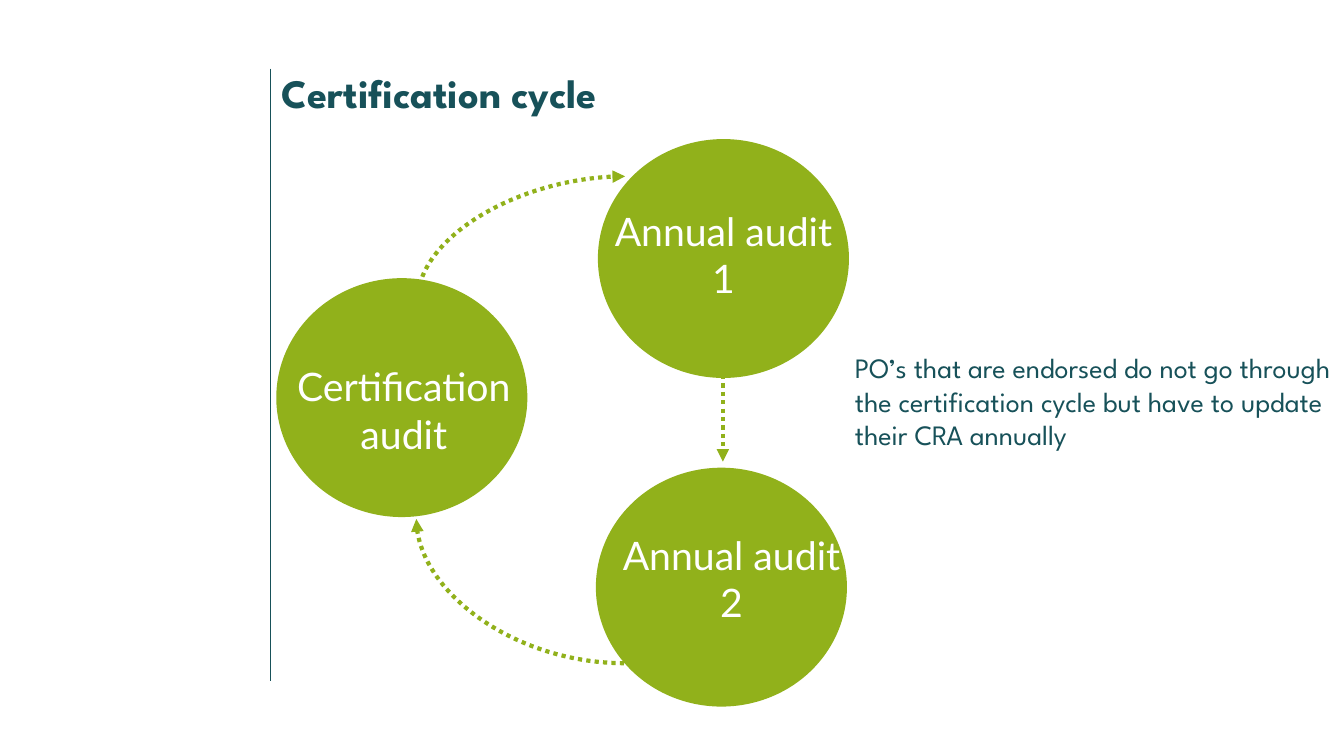
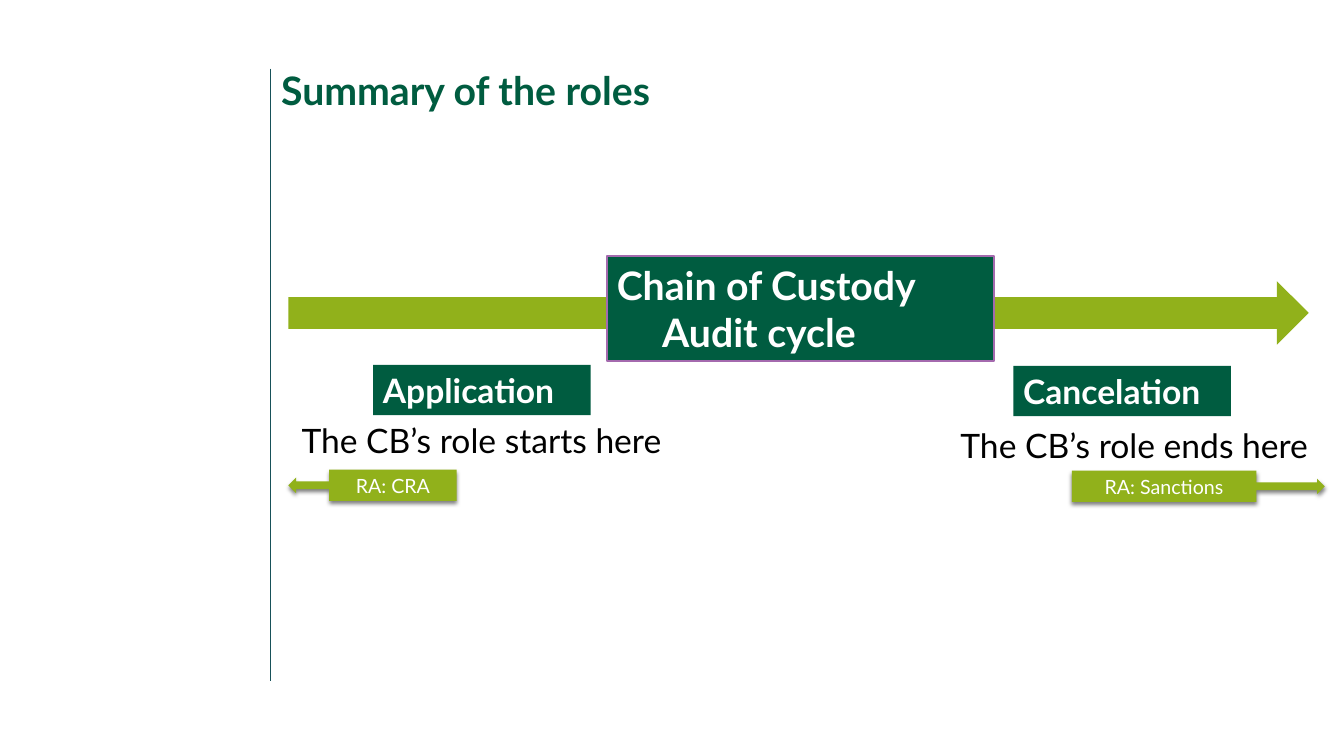
from lxml.etree import SubElement
from pptx import Presentation
from pptx.dml.color import RGBColor
from pptx.enum.dml import MSO_LINE
from pptx.enum.shapes import MSO_CONNECTOR, MSO_SHAPE
from pptx.enum.text import MSO_ANCHOR, PP_ALIGN
from pptx.oxml.ns import qn
from pptx.util import Inches, Pt

COLORS = {
    "teal": "175159",
    "forest": "005C40",
    "lime": "91B11B",
    "violet": "A46AAE",
    "white": "FFFFFF",
    "black": "000000",
}
BODY_FONT = "Lato"
DISPLAY_FONT = "League Spartan"
RULE_X, RULE_TOP, RULE_BOTTOM = 2.68, 0.68, 6.76


def rgb(name):
    return RGBColor.from_string(COLORS[name])


def write(shape, *lines, size=28, font=BODY_FONT, color="white", bold=False,
          align=PP_ALIGN.LEFT, anchor=MSO_ANCHOR.TOP, inset=None, indents=()):
    """Fill a shape with one paragraph per line; indents are in inches."""
    frame = shape.text_frame
    frame.word_wrap = True
    frame.vertical_anchor = anchor
    if inset is not None:
        frame.margin_left = frame.margin_right = Inches(inset)
        frame.margin_top = frame.margin_bottom = Inches(inset)
    for i, line in enumerate(lines):
        paragraph = frame.paragraphs[0] if i == 0 else frame.add_paragraph()
        paragraph.alignment = align
        if i < len(indents):
            paragraph._p.get_or_add_pPr().set("marL", str(Inches(indents[i])))
        run = paragraph.add_run()
        run.text = line
        run.font.size = Pt(size)
        run.font.name = font
        run.font.bold = bold
        run.font.color.rgb = rgb(color)


def add_text(slide, box, *lines, **style):
    write(slide.shapes.add_textbox(*map(Inches, box)), *lines, **style)


def add_block(slide, kind, box, fill, outline=None):
    block = slide.shapes.add_shape(kind, *map(Inches, box))
    block.shadow.inherit = False
    block.fill.solid()
    block.fill.fore_color.rgb = rgb(fill)
    if outline:
        block.line.color.rgb = rgb(outline)
        block.line.width = Pt(1)
    else:
        block.line.fill.background()
    return block


def add_line(slide, start, end, color, width, kind=MSO_CONNECTOR.STRAIGHT):
    line = slide.shapes.add_connector(kind, *map(Inches, (*start, *end)))
    line.line.color.rgb = rgb(color)
    line.line.width = Pt(width)
    SubElement(line._element.spPr, qn("a:effectLst"))
    return line


def add_dotted_arrow(slide, start, end, curved=True, leave_upright=False):
    """Dotted arrow; a curved one bends a quarter turn on its way."""
    if leave_upright:
        # Turn both points back about their centre, then rotate the connector
        cx, cy = (start[0] + end[0]) / 2, (start[1] + end[1]) / 2
        start, end = [(cx + y - cy, cy - x + cx) for x, y in (start, end)]
    kind = MSO_CONNECTOR.CURVE if curved else MSO_CONNECTOR.STRAIGHT
    arrow = add_line(slide, start, end, "lime", 3, kind)
    arrow.line.dash_style = MSO_LINE.ROUND_DOT
    SubElement(arrow.line._get_or_add_ln(), qn("a:tailEnd"), type="triangle")
    properties = arrow._element.spPr
    if curved:
        properties.find(qn("a:prstGeom")).set("prst", "curvedConnector2")
    if leave_upright:
        properties.find(qn("a:xfrm")).set("rot", str(90 * 60000))


def add_soft_shadow(shape):
    effects = shape._element.spPr.find(qn("a:effectLst"))
    shadow = SubElement(effects, qn("a:outerShdw"), blurRad=str(Pt(3)),
                        dist=str(Pt(2)), dir=str(90 * 60000), rotWithShape="0")
    color = SubElement(shadow, qn("a:srgbClr"), val=COLORS["black"])
    SubElement(color, qn("a:alpha"), val="50000")


def new_slide(deck, title, top, **style):
    """Blank slide with the shared vertical rule and title."""
    slide = deck.slides.add_slide(deck.slide_layouts[6])
    add_line(slide, (RULE_X, RULE_TOP), (RULE_X, RULE_BOTTOM), "teal", 0.5)
    add_text(slide, (2.69, top, 10.07, 0.67), title, bold=True, **style)
    return slide


def add_audit(slide, left, top, label, shift, drop):
    """Audit circle; shift and drop place its label inside."""
    width, height, label_width = 2.49, 2.37, 2.5
    add_block(slide, MSO_SHAPE.OVAL, (left, top, width, height), "lime")
    label_left = left + (width - label_width) / 2 + shift
    add_text(slide, (label_left, top + drop, label_width, 1.04), label,
             align=PP_ALIGN.CENTER)


def add_role_end(slide, left, top, stage, note, note_box, callout, kind,
                 callout_box, body_share):
    """Stage tag, with its note and callout placed from the tag's corner."""
    def place(dx, dy, width, height):
        return left + dx, top + dy, width, height

    tag = add_block(slide, MSO_SHAPE.RECTANGLE, place(0, 0, 2.16, 0.5), "forest")
    write(tag, stage, size=24, bold=True)
    centred = dict(align=PP_ALIGN.CENTER, anchor=MSO_ANCHOR.MIDDLE, inset=0.04)
    add_text(slide, place(*note_box), note, size=24, color="black", **centred)
    pointer = add_block(slide, kind, place(*callout_box), "lime")
    for i, value in enumerate((0.25, 0.25, 0.25, body_share)):
        pointer.adjustments[i] = value
    add_soft_shadow(pointer)
    write(pointer, callout, size=14, **centred)


def cycle_slide(deck):
    slide = new_slide(deck, "Certification cycle", 0.63, size=28.8,
                      font=DISPLAY_FONT, color="teal")
    # Audits
    for audit in ((2.74, 2.76, "Certification audit", 0.02, 0.79),
                  (5.93, 1.38, "Annual audit 1", 0, 0.63),
                  (5.91, 4.64, "Annual audit 2", 0.1, 0.58)):
        add_audit(slide, *audit)
    # Steps of the cycle
    add_dotted_arrow(slide, (4.14, 2.99), (6.2, 1.75), leave_upright=True)
    add_dotted_arrow(slide, (7.17, 3.72), (7.17, 4.58), curved=False)
    add_dotted_arrow(slide, (6.19, 6.58), (4.13, 5.15))
    # Remark on endorsed POs
    add_text(slide, (8.38, 3.43, 4.95, 1.79),
             "PO’s that are endorsed do not go through the certification cycle "
             "but have to update their CRA annually",
             size=20, font=DISPLAY_FONT, color="teal")


def roles_slide(deck):
    slide = new_slide(deck, "Summary of the roles", 0.61, color="forest")
    # Start and end of the role
    add_role_end(slide, 3.7, 3.62, "Application",
                 "The CB’s role starts here", (-1.23, 0.51, 4.61, 0.48),
                 "RA: CRA", MSO_SHAPE.LEFT_ARROW_CALLOUT,
                 (-0.84, 1.04, 1.67, 0.31), 0.757)
    add_role_end(slide, 10.05, 3.63, "Cancelation",
                 "The CB’s role ends here", (-0.88, 0.55, 4.16, 0.48),
                 "RA: Sanctions", MSO_SHAPE.RIGHT_ARROW_CALLOUT,
                 (0.58, 1.04, 2.51, 0.31), 0.73)
    # Timeline with the audit cycle on it
    add_block(slide, MSO_SHAPE.RIGHT_ARROW, (2.86, 2.79, 10.12, 0.63), "lime")
    cycle = add_block(slide, MSO_SHAPE.RECTANGLE, (6.02, 2.54, 3.84, 1.04),
                      "forest", outline="violet")
    write(cycle, "Chain of Custody", "Audit cycle", bold=True, indents=(0, 0.45))


def main():
    deck = Presentation()
    deck.slide_width, deck.slide_height = Inches(13.33), Inches(7.5)
    cycle_slide(deck)
    roles_slide(deck)
    deck.save("out.pptx")


if __name__ == "__main__":
    main()
